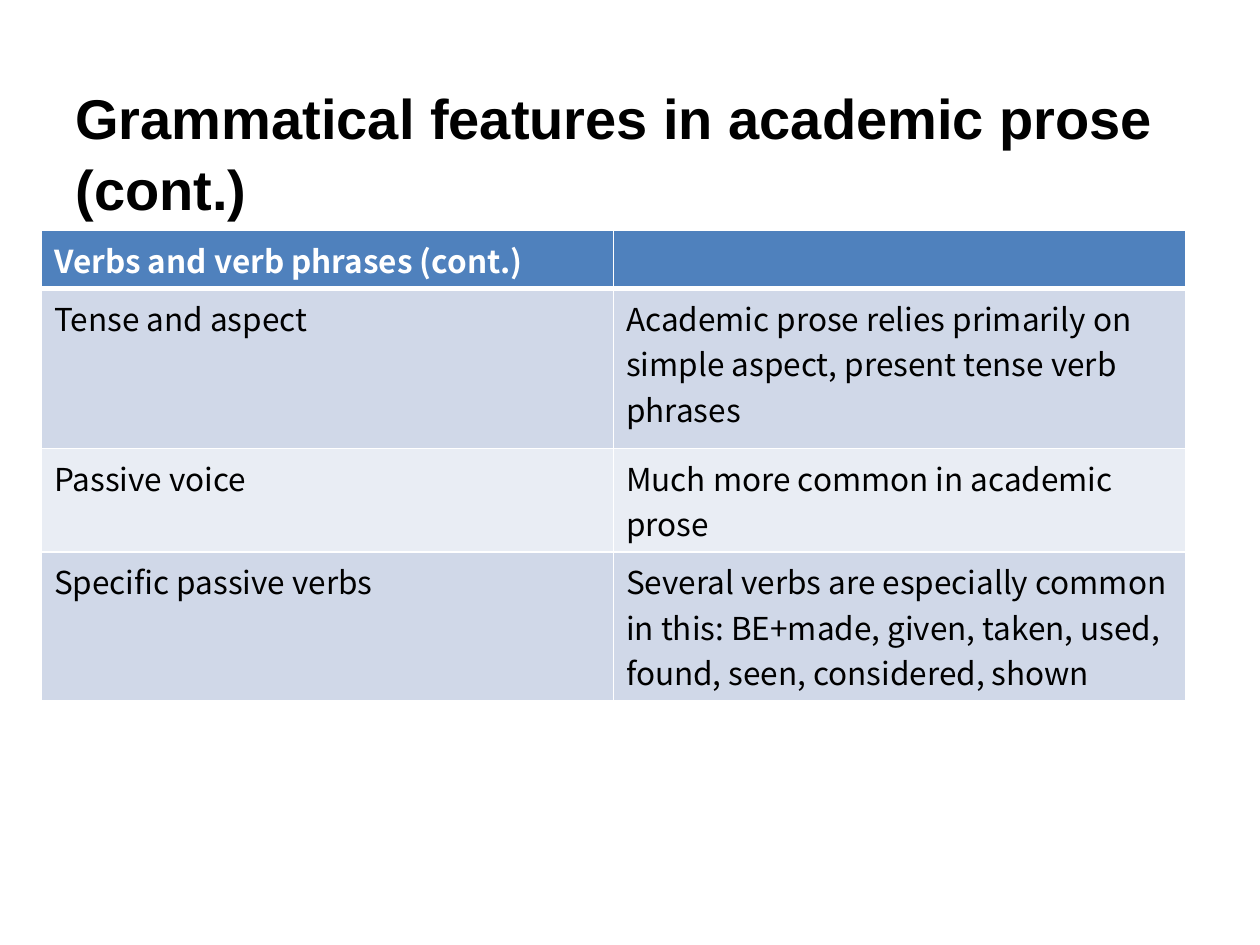
from dataclasses import dataclass

from lxml.etree import SubElement
from pptx import Presentation
from pptx.dml.color import RGBColor
from pptx.enum.text import MSO_ANCHOR
from pptx.oxml.ns import qn
from pptx.util import Inches, Pt

TABLE_FONT = "Noto Sans CJK KR"
WHITE, BLACK = "FFFFFF", "000000"


@dataclass
class FeatureRow:
    feature: str
    detail: str
    height: float
    fill: str
    color: str = BLACK
    bold: bool = False
    bottom_line: float = 1


ROWS = [
    FeatureRow("Verbs and verb phrases (cont.)", "", 0.46, "4F81BD", WHITE, True, 3),
    FeatureRow(
        "Tense and aspect",
        "Academic prose relies primarily on simple aspect, present tense verb phrases",
        1.27,
        "D0D8E8",
    ),
    FeatureRow("Passive voice", "Much more common in academic prose", 0.82, "E9EDF4"),
    FeatureRow(
        "Specific passive verbs",
        "Several verbs are especially common in this: BE+made, given, taken, used, "
        "found, seen, considered, shown",
        1.18,
        "D0D8E8",
    ),
]


def rgb(value: str) -> RGBColor:
    return RGBColor.from_string(value)


def write(frame, text: str, color: str, **font_values) -> None:
    span = frame.paragraphs[0].add_run()
    span.text = text
    span.font.color.rgb = rgb(color)
    for name, value in font_values.items():
        setattr(span.font, name, value)


def add_borders(cell, widths: dict[str, float]) -> None:
    properties = cell._tc.get_or_add_tcPr()
    for index, (side, width) in enumerate(widths.items()):
        line = SubElement(properties, qn(f"a:{side}"), w=str(Pt(width)))
        fill = SubElement(line, qn("a:solidFill"))
        SubElement(fill, qn("a:srgbClr"), val=WHITE)
        properties.insert(index, line)


def add_title(page, text: str) -> None:
    box = page.shapes.add_textbox(Inches(0.5), Inches(0.58), Inches(9), Inches(1.08))
    frame = box.text_frame
    for name, value in {"word_wrap": True, "vertical_anchor": MSO_ANCHOR.TOP}.items():
        setattr(frame, name, value)
    frame.paragraphs[0].line_spacing = 1.06
    write(frame, text, BLACK, name="Arial", size=Pt(32), bold=True)


def add_feature_table(page, rows: list[FeatureRow]) -> None:
    total = sum(row.height for row in rows)
    table = page.shapes.add_table(
        len(rows), 2, Inches(0.33), Inches(1.83), Inches(9.08), Inches(total)
    ).table
    top_line = 1
    for index, row in enumerate(rows):
        table.rows[index].height = Inches(row.height)
        for cell, text in zip(table.rows[index].cells, (row.feature, row.detail)):
            cell.fill.solid()
            cell.fill.fore_color.rgb = rgb(row.fill)
            add_borders(
                cell, {"lnL": 1, "lnR": 1, "lnT": top_line, "lnB": row.bottom_line}
            )
            if text:
                write(
                    cell.text_frame,
                    text,
                    row.color,
                    name=TABLE_FONT,
                    size=Pt(18),
                    bold=row.bold,
                )
        top_line = row.bottom_line


def main() -> None:
    deck = Presentation()
    deck.slide_width, deck.slide_height = Inches(10), Inches(7.5)
    page = deck.slides.add_slide(deck.slide_layouts[6])
    add_title(page, "Grammatical features in academic prose (cont.)")
    add_feature_table(page, ROWS)
    deck.save("out.pptx")


if __name__ == "__main__":
    main()
